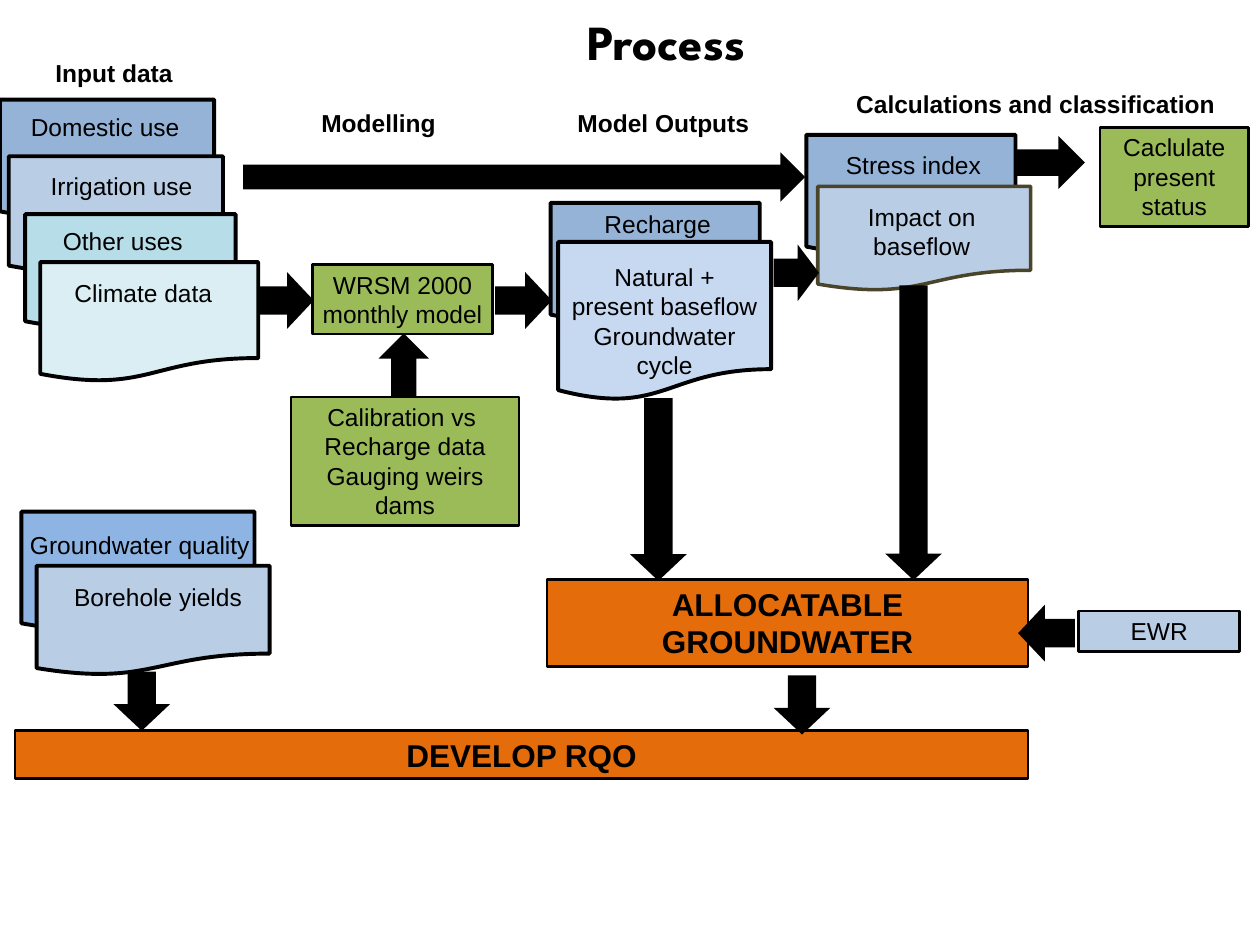
from pptx import Presentation
from pptx.dml.color import RGBColor
from pptx.enum.shapes import MSO_SHAPE as Shape
from pptx.enum.text import MSO_ANCHOR as Anchor, MSO_AUTO_SIZE as AutoSize, PP_ALIGN as Align
from pptx.util import Emu, Pt

PX = 9144  # EMU in one px, at 100 px to the inch
BLACK = RGBColor(0x00, 0x00, 0x00)
BLUE = RGBColor(0x95, 0xB3, 0xD7)
PALE_BLUE = RGBColor(0xB9, 0xCD, 0xE5)
ICE_BLUE = RGBColor(0xC6, 0xD9, 0xF1)
SKY_BLUE = RGBColor(0x8E, 0xB4, 0xE3)
AQUA = RGBColor(0xB7, 0xDE, 0xE8)
PALE_AQUA = RGBColor(0xDB, 0xEE, 0xF4)
GREEN = RGBColor(0x9B, 0xBB, 0x59)
ORANGE = RGBColor(0xE4, 0x6C, 0x0A)
OLIVE = RGBColor(0x4A, 0x45, 0x2A)


def px(*lengths):
    return [Emu(length * PX) for length in lengths]


class FlowSlide:
    def __init__(self, page, font="Arial", size=14):
        self.page, self.font, self.size = page, font, size

    def set_text(self, shape, text, size=None, bold=False, font=None, inset=(4, 4), middle=False):
        """Fill the shape with centred paragraphs, one for each line of text."""
        frame = shape.text_frame
        frame.text = text
        frame.word_wrap = True
        frame.auto_size = AutoSize.NONE if middle else AutoSize.SHAPE_TO_FIT_TEXT
        frame.vertical_anchor = Anchor.MIDDLE if middle else Anchor.TOP
        frame.margin_left, frame.margin_top = px(*inset)
        frame.margin_right, frame.margin_bottom = px(*inset)
        for para in frame.paragraphs:
            para.alignment = Align.CENTER
            for span in para.runs:
                span.font.name = font or self.font
                span.font.size = Pt(size or self.size)
                span.font.bold = bold
                span.font.color.rgb = BLACK

    def shape(self, kind, place, fill, line=BLACK, width=1.5, parent=None):
        shape = (parent or self.page).shapes.add_shape(kind, *px(*place))
        shape.shadow.inherit = False
        shape.fill.solid()
        shape.fill.fore_color.rgb = fill
        if line is None:
            shape.line.fill.background()
        else:
            shape.line.color.rgb = line
            shape.line.width = Pt(width)
        return shape

    def label(self, text, place, parent=None, **style):
        box = (parent or self.page).shapes.add_textbox(*px(*place))
        self.set_text(box, text, **style)

    def heading(self, text, place):
        self.label(text, place, bold=True)

    def step(self, text, place, fill, **style):
        self.set_text(self.shape(Shape.RECTANGLE, place, fill), text, **style)

    def document(self, text, place, label_place, fill, line=BLACK, width=2.25, **style):
        """Group a wavy-bottomed sheet with its label."""
        group = self.page.shapes.add_group_shape()
        self.shape(Shape.FLOWCHART_DOCUMENT, place, fill, line, width, group)
        self.label(text, label_place, group, **style)

    def arrow(self, place, turn=0, head=0.47):
        """Draw a block arrow; place is its box before the clockwise turn."""
        arrow = self.shape(Shape.RIGHT_ARROW, place, BLACK, None)
        arrow.adjustments[0], arrow.adjustments[1] = 0.5, head
        arrow.rotation = turn


def main():
    deck = Presentation()
    deck.slide_width, deck.slide_height = px(1000, 750)
    flow = FlowSlide(deck.slides.add_slide(deck.slide_layouts[6]))
    roomy = {"inset": (10, 5), "middle": True}

    flow.label("Process", (116, 4, 826, 57), size=28, bold=True,
               font="League Spartan", inset=(10, 5))
    flow.heading("Input data", (-2, 42, 185, 32))
    flow.heading("Modelling", (208, 82, 185, 32))
    flow.heading("Model Outputs", (434, 82, 185, 32))
    flow.heading("Calculations and classification", (659, 67, 326, 32))

    # Input data
    flow.document("Domestic use", (0, 79, 170, 95), (2, 85, 163, 32), BLUE)
    flow.document("Irrigation use", (7, 124, 170, 93), (4, 131, 185, 32), PALE_BLUE, **roomy)
    flow.document("Other uses", (20, 170, 167, 91), (15, 175, 165, 32), AQUA)
    flow.document("Climate data ", (32, 208, 173, 95), (24, 217, 185, 32), PALE_AQUA)
    flow.document("Groundwater quality", (17, 406, 185, 95), (12, 417, 198, 32), SKY_BLUE)
    flow.document("Borehole yields", (29, 449, 185, 87), (33, 458, 185, 32), PALE_BLUE)

    # Modelling
    flow.step("Calibration vs \nRecharge data\nGauging weirs\ndams", (231, 315, 181, 102), GREEN)
    flow.arrow((295, 270, 51, 40), turn=270, head=0.5)
    flow.arrow((204, 216, 45, 45))
    flow.step("WRSM 2000 monthly model", (248, 210, 143, 55), GREEN)

    # Model outputs
    flow.document("Recharge", (437, 161, 166, 95), (442, 162, 160, 32), BLUE)
    flow.document("Natural + present baseflow\nGroundwater cycle",
                  (443, 192, 169, 126), (443, 198, 169, 113), ICE_BLUE, **roomy)
    flow.arrow((393, 216, 45, 45))

    # Calculations and classification
    flow.document("Stress index", (640, 107, 166, 95), (640, 115, 170, 32), BLUE)
    flow.document("Impact on baseflow", (649, 148, 169, 83), (647, 156, 169, 55),
                  PALE_BLUE, OLIVE, 2)
    flow.step("Caclulate present status", (873, 101, 118, 79), GREEN)
    flow.arrow((193, 121, 446, 39), head=0.5)
    flow.arrow((806, 108, 55, 42), head=0.5)
    flow.arrow((614, 194, 36, 45))

    # Results
    flow.step("DEVELOP RQO", (12, 580, 804, 38), ORANGE, size=18, bold=True)
    flow.step("ALLOCATABLE GROUNDWATER", (434, 460, 382, 69), ORANGE, size=18, bold=True)
    flow.step("EWR", (856, 485, 128, 32), PALE_BLUE)
    flow.arrow((808, 480, 45, 45), turn=180)
    for down in ((450, 366, 145, 45), (608, 321, 234, 45),
                 (89, 534, 47, 45), (613, 537, 47, 45)):
        flow.arrow(down, turn=90)

    deck.save("out.pptx")


if __name__ == "__main__":
    main()
